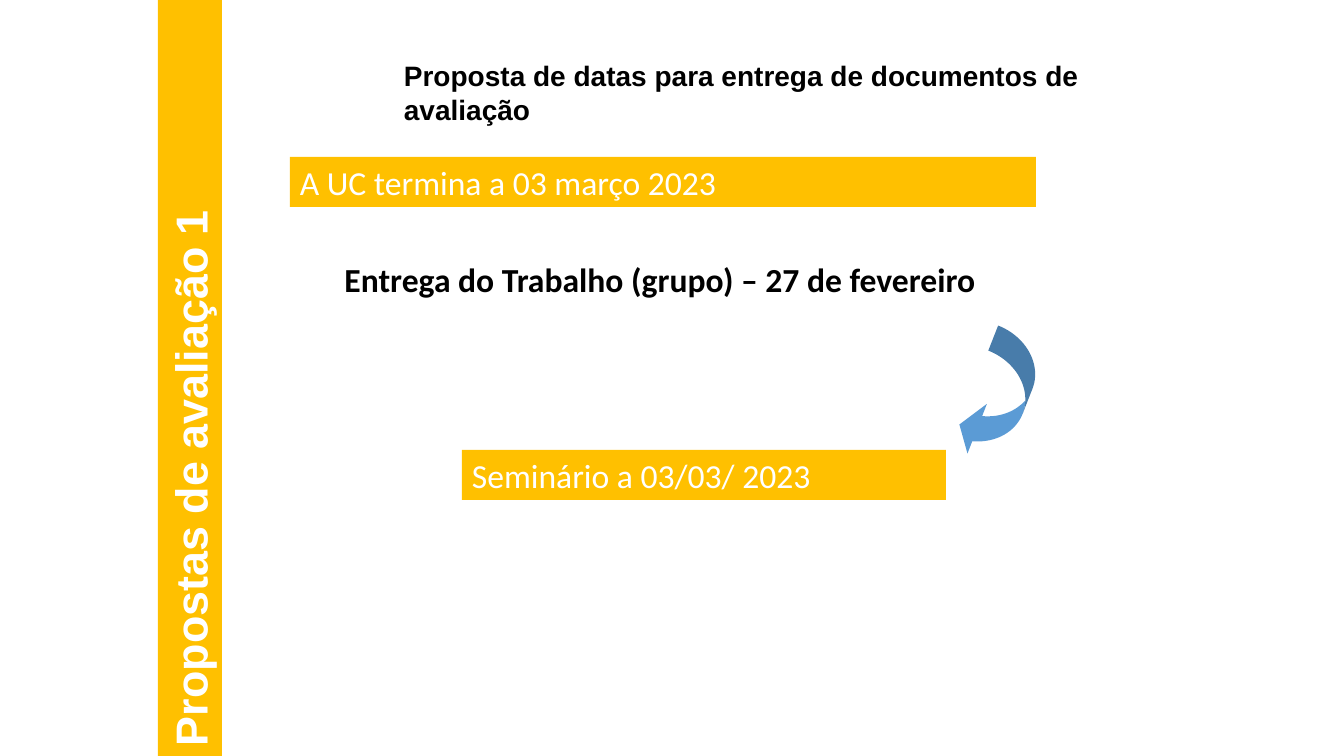
from pptx import Presentation
from pptx.dml.color import RGBColor
from pptx.enum.shapes import MSO_SHAPE
from pptx.enum.text import MSO_ANCHOR, PP_ALIGN
from pptx.util import Pt

EMU_PER_PX = 914400 / 100.8
COLORS = {"gold": "FFC000", "blue": "5B9BD5", "black": "000000", "white": "FFFFFF"}


def px(*lengths):
    """Turn pixel lengths into EMU."""
    return [round(length * EMU_PER_PX) for length in lengths]


class SlideBuilder:
    def __init__(self, slide):
        self.shapes = slide.shapes

    def add_words(self, shape, words, size, color, font="Calibri", bold=False):
        frame = shape.text_frame
        frame.word_wrap = True
        frame.vertical_anchor = MSO_ANCHOR.TOP
        paragraph = frame.paragraphs[0]
        paragraph.alignment = PP_ALIGN.LEFT
        run = paragraph.add_run()
        run.text = words
        run.font.name = font
        run.font.size = Pt(size)
        run.font.bold = bold
        run.font.color.rgb = RGBColor.from_string(COLORS[color])

    def heading(self, box, words, size, font="Calibri"):
        self.add_words(self.shapes.add_textbox(*px(*box)), words, size, "black", font, bold=True)

    def shape(self, kind, box, fill, rotation=0):
        shape = self.shapes.add_shape(kind, *px(*box))
        shape.shadow.inherit = False
        shape.fill.solid()
        shape.fill.fore_color.rgb = RGBColor.from_string(COLORS[fill])
        shape.line.fill.background()
        shape.rotation = rotation
        return shape

    def bar(self, box, words, size=24, rotation=0, **style):
        bar = self.shape(MSO_SHAPE.RECTANGLE, box, "gold", rotation)
        self.add_words(bar, words, size, "white", **style)

    def curved_arrow(self, box, rotation, adjustments):
        arrow = self.shape(MSO_SHAPE.CURVED_LEFT_ARROW, box, "blue", rotation)
        for index, value in enumerate(adjustments):
            arrow.adjustments[index] = value


def main():
    deck = Presentation()
    deck.slide_width, deck.slide_height = px(1344, 756)
    builder = SlideBuilder(deck.slides.add_slide(deck.slide_layouts[6]))

    builder.heading((394, 54, 770, 78),
                    "Proposta de datas para entrega de documentos de avaliação", 20, "Arial")
    builder.heading((327, 254, 754, 50), " Entrega do Trabalho (grupo) – 27 de fevereiro", 24)
    builder.bar((290, 157, 746, 50), "A UC termina a 03 março 2023")
    builder.curved_arrow((972, 331, 55, 133), 21.4, (0.49, 0.97, 0.33))
    builder.bar((462, 450, 484, 50), "Seminário a 03/03/ 2023")
    builder.bar((-188, 346, 756, 64), "Propostas de avaliação 1", size=32, rotation=270,
                font="Arial", bold=True)

    deck.save("out.pptx")


if __name__ == "__main__":
    main()
